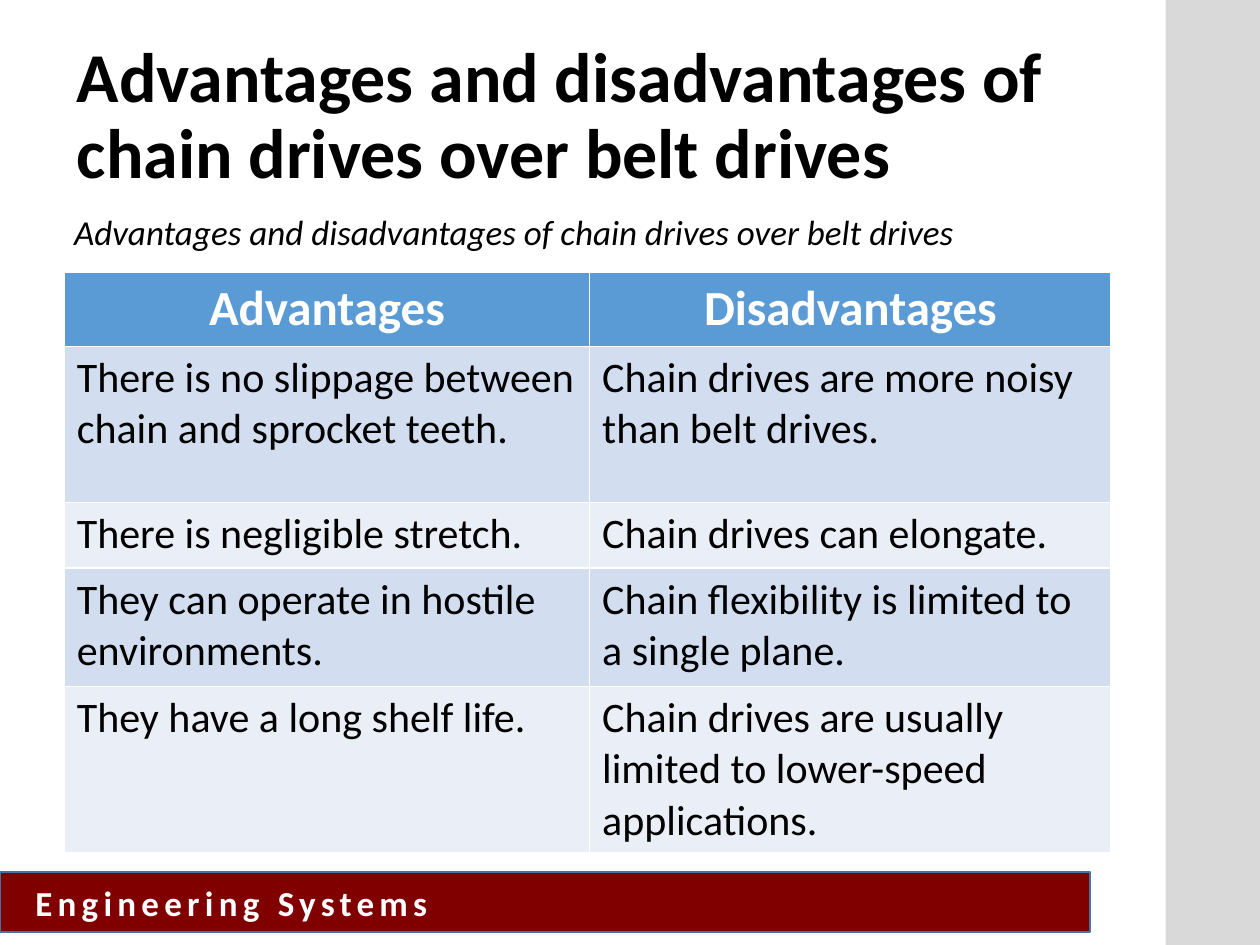
from pptx import Presentation
from pptx.dml.color import RGBColor
from pptx.enum.shapes import MSO_SHAPE
from pptx.enum.text import MSO_ANCHOR, MSO_AUTO_SIZE, PP_ALIGN
from pptx.util import Inches, Pt

BLACK = RGBColor(0, 0, 0)
WHITE = RGBColor(255, 255, 255)
MAROON = RGBColor(128, 0, 0)
EDGE = RGBColor(0x43, 0x73, 0x9E)
GREY = RGBColor(0xD9, 0xD9, 0xD9)
BLUE = RGBColor(0x5B, 0x9B, 0xD5)
BANDS = (RGBColor(0xD2, 0xDE, 0xEF), RGBColor(0xEA, 0xEF, 0xF7))

WIDE, HIGH = 10, 7.5
LEFT = 0.51
COLS = (4.17, 4.14)
ROWS = (0.59, 1.24, 0.52, 0.94, 1.28)
TOPIC = "Advantages and disadvantages of chain drives over belt drives"
CELLS = (
    ("Advantages", "Disadvantages"),
    ("There is no slippage between chain and sprocket teeth.",
     "Chain drives are more noisy than belt drives."),
    ("There is negligible stretch.", "Chain drives can elongate."),
    ("They can operate in hostile environments.",
     "Chain flexibility is limited to a single plane."),
    ("They have a long shelf life.",
     "Chain drives are usually limited to lower-speed applications."),
)


def write(frame, text, size, color=BLACK, bold=False, italic=False,
          align=PP_ALIGN.LEFT):
    """Put one formatted paragraph in a text frame and return it."""
    frame.text = text
    frame.word_wrap = True
    para = frame.paragraphs[0]
    para.alignment = align
    font = para.runs[0].font
    font.name, font.size = "Calibri", Pt(size)
    font.bold, font.italic = bold, italic
    font.color.rgb = color
    return para


def add_bar(slide, left, top, width, height, fill, line=None):
    """Add a flat rectangle, outlined only if a line colour is given."""
    bar = slide.shapes.add_shape(
        MSO_SHAPE.RECTANGLE, Inches(left), Inches(top),
        Inches(width), Inches(height))
    bar.shadow.inherit = False
    bar.fill.solid()
    bar.fill.fore_color.rgb = fill
    if line is None:
        bar.line.fill.background()
    else:
        bar.line.color.rgb = line
        bar.line.width = Pt(1)
    return bar


def add_banner(slide):
    """Add the footer bar with its widely spaced course name."""
    bar = add_bar(slide, 0, 6.92, 8.65, 0.48, MAROON, EDGE)
    frame = bar.text_frame
    frame.margin_left = Inches(0.28)
    frame.vertical_anchor = MSO_ANCHOR.MIDDLE
    para = write(frame, "Engineering Systems", 20, WHITE, bold=True)
    para.runs[0]._r.get_or_add_rPr().set("spc", "300")


def set_title(slide):
    """Place and format the title placeholder."""
    title = slide.shapes.title
    title.left, title.top = Inches(LEFT), Inches(0.21)
    title.width, title.height = Inches(8.44), Inches(1.45)
    frame = title.text_frame
    frame.auto_size = MSO_AUTO_SIZE.NONE
    frame.vertical_anchor = MSO_ANCHOR.MIDDLE
    write(frame, TOPIC, 40, bold=True).line_spacing = 0.9


def add_table(slide):
    """Add the two-column comparison with banded rows."""
    table = slide.shapes.add_table(
        len(ROWS), len(COLS), Inches(LEFT), Inches(2.16),
        Inches(sum(COLS)), Inches(sum(ROWS))).table
    for col, width in zip(table.columns, COLS):
        col.width = Inches(width)
    for r, (height, texts) in enumerate(zip(ROWS, CELLS)):
        table.rows[r].height = Inches(height)
        for c, text in enumerate(texts):
            cell = table.cell(r, c)
            cell.fill.solid()
            if r == 0:
                cell.fill.fore_color.rgb = BLUE
                write(cell.text_frame, text, 28, WHITE, bold=True,
                      align=PP_ALIGN.CENTER)
            else:
                cell.fill.fore_color.rgb = BANDS[(r - 1) % 2]
                write(cell.text_frame, text, 24)


def add_caption(slide):
    """Add the italic caption above the table."""
    box = slide.shapes.add_textbox(
        Inches(0.49), Inches(1.62), Inches(7.34), Inches(0.44))
    write(box.text_frame, TOPIC, 20, italic=True)
    box.text_frame.auto_size = MSO_AUTO_SIZE.SHAPE_TO_FIT_TEXT


def main():
    """Build and save the slide."""
    deck = Presentation()
    deck.slide_width, deck.slide_height = Inches(WIDE), Inches(HIGH)
    slide = deck.slides.add_slide(deck.slide_layouts[5])
    add_banner(slide)
    add_bar(slide, 9.25, 0, 0.75, HIGH, GREY)
    set_title(slide)
    add_table(slide)
    add_caption(slide)
    deck.save("out.pptx")


if __name__ == "__main__":
    main()
